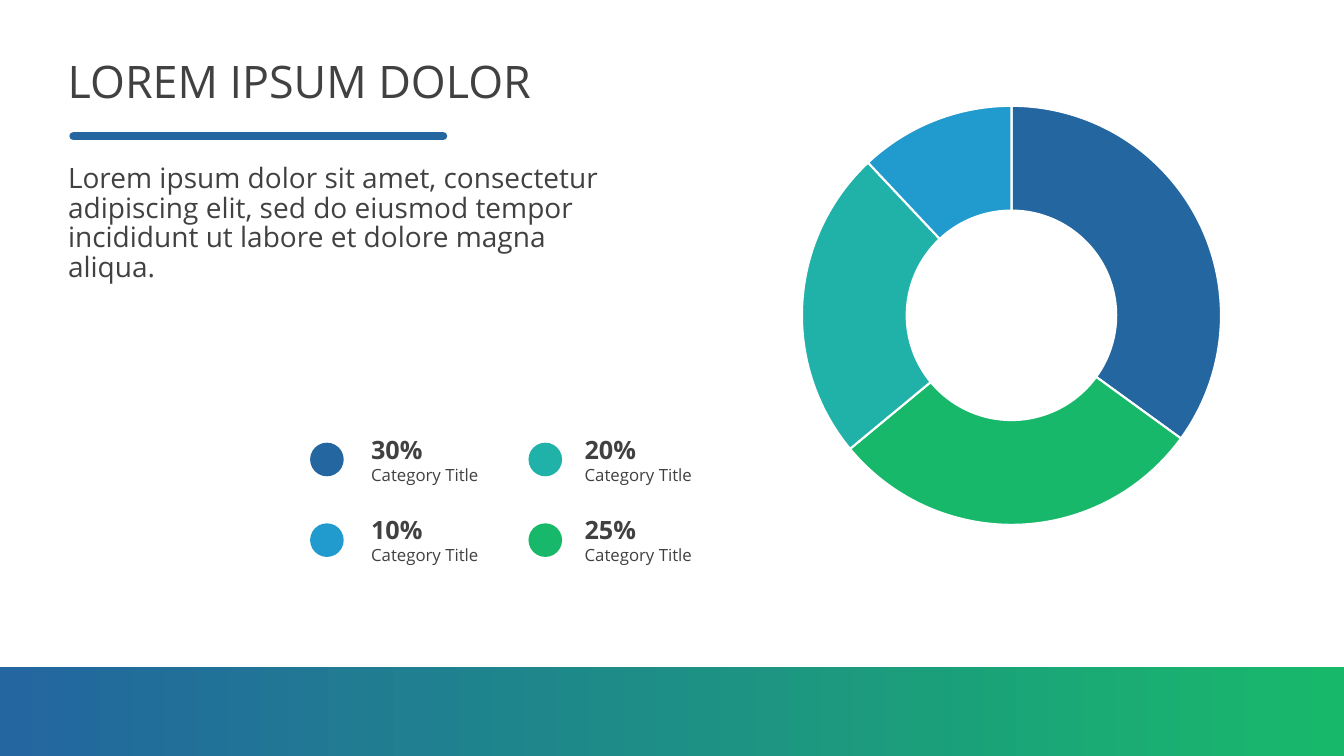
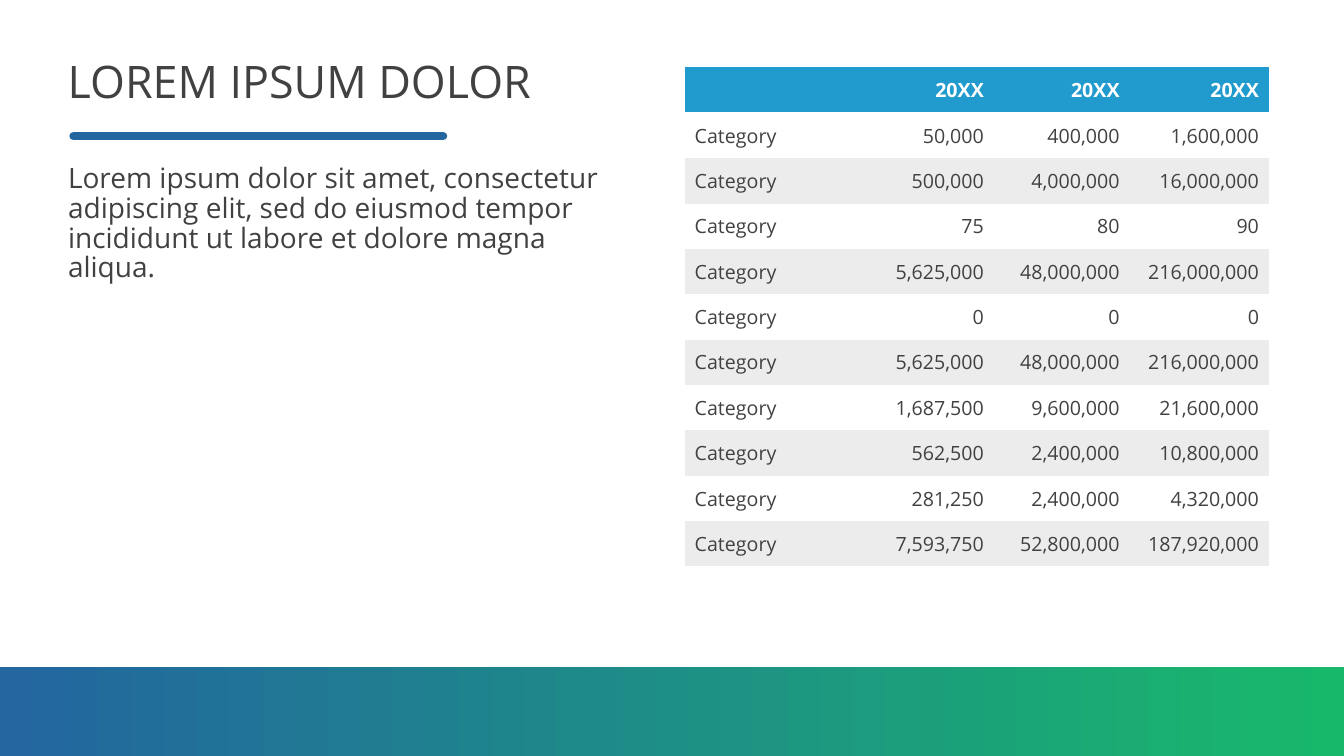
"""Build two slides: a doughnut chart with its legend, and a table of yearly figures."""
from dataclasses import dataclass

from lxml.etree import SubElement
from pptx import Presentation
from pptx.chart.data import CategoryChartData
from pptx.dml.color import RGBColor
from pptx.enum.chart import XL_CHART_TYPE as ChartType
from pptx.enum.shapes import MSO_CONNECTOR as Connector, MSO_SHAPE as Shape
from pptx.enum.text import MSO_ANCHOR as Anchor, MSO_AUTO_SIZE as AutoSize, PP_ALIGN as Align
from pptx.oxml import parse_xml
from pptx.oxml.ns import nsdecls, qn
from pptx.util import Pt

TITLE = "LOREM IPSUM DOLOR"
BODY = ("Lorem ipsum dolor sit amet, consectetur adipiscing elit, sed do eiusmod tempor "
        "incididunt ut labore et dolore magna aliqua.")
SHARES = [("1", 35, "blue"), ("2", 29, "green"), ("3", 24, "teal"), ("4", 12, "sky")]
LEGEND = [
    [("30%", "blue"), ("20%", "teal")],
    [("10%", "sky"), ("25%", "green")],
]
LEGEND_LABEL = "Category Title"
YEARS = ["", "20XX", "20XX", "20XX"]
FIGURES = [
    ("50,000", "400,000", "1,600,000"),
    ("500,000", "4,000,000", "16,000,000"),
    ("75", "80", "90"),
    ("5,625,000", "48,000,000", "216,000,000"),
    ("0", "0", "0"),
    ("5,625,000", "48,000,000", "216,000,000"),
    ("1,687,500", "9,600,000", "21,600,000"),
    ("562,500", "2,400,000", "10,800,000"),
    ("281,250", "2,400,000", "4,320,000"),
    ("7,593,750", "52,800,000", "187,920,000"),
]
ROW_LABEL = "Category"
PLAIN_TABLE_STYLE = "{2D5ABB26-0587-4C30-8999-92F81FD0307C}"


@dataclass(frozen=True)
class Theme:
    blue: RGBColor = RGBColor.from_string("2366A0")
    green: RGBColor = RGBColor.from_string("18B86B")
    teal: RGBColor = RGBColor.from_string("20B2A9")
    sky: RGBColor = RGBColor.from_string("219ACE")
    ink: RGBColor = RGBColor.from_string("414141")
    white: RGBColor = RGBColor.from_string("FFFFFF")
    stripe: RGBColor = RGBColor.from_string("ECECEC")
    font: str = "Open Sans"
    chart_font: str = "Calibri"
    title_size: int = 32
    body_size: int = 20
    share_size: int = 18
    cell_size: int = 14
    label_size: int = 12
    chart_size: int = 10


THEME = Theme()
WIDTH, HEIGHT = 960, 540


def points(*lengths):
    return [Pt(length) for length in lengths]


def style(paragraph, size, color=THEME.ink, bold=False, font=THEME.font):
    paragraph.font.name = font
    paragraph.font.size = Pt(size)
    paragraph.font.bold = bold
    paragraph.font.color.rgb = color


def add_text(slide, text, box, size, spacing, anchor=Anchor.TOP, after=0, bold=False):
    frame = slide.shapes.add_textbox(*points(*box)).text_frame
    frame.word_wrap = True
    frame.auto_size = AutoSize.NONE
    frame.vertical_anchor = anchor
    paragraph = frame.paragraphs[0]
    paragraph.text = text
    paragraph.line_spacing = spacing
    paragraph.space_after = Pt(after)
    style(paragraph, size, bold=bold)


def add_plain_shape(slide, preset, box):
    shape = slide.shapes.add_shape(preset, *points(*box))
    shape.shadow.inherit = False
    shape.line.fill.background()
    return shape


def add_base(deck, body_height):
    slide = deck.slides.add_slide(deck.slide_layouts[6])
    band = add_plain_shape(slide, Shape.RECTANGLE, (0, 476.5, WIDTH, 63.5))
    band.fill.gradient()
    band.fill.gradient_angle = 0
    for stop, color in zip(band.fill.gradient_stops, (THEME.blue, THEME.green)):
        stop.color.rgb = color

    rule = slide.shapes.add_connector(Connector.STRAIGHT, *points(52.5, 97.3, 316.5, 97.3))
    rule.line.color.rgb = THEME.blue
    rule.line.width = Pt(6)
    rule.line._get_or_add_ln().set("cap", "rnd")
    SubElement(rule._element.spPr, qn("a:effectLst"))

    add_text(slide, TITLE, (41.3, 36, 882.7, 49.7), THEME.title_size, 0.85, Anchor.MIDDLE)
    add_text(slide, BODY, (41.5, 114.5, 402.5, body_height), THEME.body_size, 0.88)
    return slide


def add_doughnut(slide):
    data = CategoryChartData()
    data.categories = [name for name, _, _ in SHARES]
    data.add_series("Series 1", [value for _, value, _ in SHARES])
    chart = slide.shapes.add_chart(
        ChartType.DOUGHNUT, *points(563, 62.6, 319, 325.4), data).chart
    chart.has_legend = False
    chart.has_title = False
    chart.font.name = THEME.chart_font
    chart.font.size = Pt(THEME.chart_size)
    chart.font.color.rgb = THEME.white

    plot = chart.plots[0]
    plot.vary_by_categories = True
    for index, (_, _, color) in enumerate(SHARES):
        slice_format = plot.series[0].points[index].format
        slice_format.fill.solid()
        slice_format.fill.fore_color.rgb = getattr(THEME, color)
        slice_format.line.color.rgb = THEME.white
        slice_format.line.width = Pt(1.5)

    plot_area = chart._chartSpace.find(".//" + qn("c:plotArea"))
    plot_area.find(".//" + qn("c:holeSize")).set("val", "52")
    for default_layout in plot_area.findall(qn("c:layout")):
        plot_area.remove(default_layout)
    plot_area.insert(0, parse_xml(
        f'<c:layout {nsdecls("c")}><c:manualLayout><c:layoutTarget val="inner"/>'
        '<c:xMode val="edge"/><c:yMode val="edge"/><c:x val="0.03"/><c:y val="0.04"/>'
        '<c:w val="0.94"/><c:h val="0.92"/></c:manualLayout></c:layout>'))


def add_legend(slide):
    top, row_pitch, dot_size = 309, 57.6, 24
    columns = [(221.5, 258), (377.5, 410.5)]
    for row, entries in enumerate(LEGEND):
        y = top + row * row_pitch
        for (dot_x, text_x), (share, color) in zip(columns, entries):
            dot = add_plain_shape(slide, Shape.OVAL, (dot_x, y + 7.2, dot_size, dot_size))
            dot.fill.solid()
            dot.fill.fore_color.rgb = getattr(THEME, color)
            add_text(slide, share, (text_x, y, 99.4, 23), THEME.share_size, 0.9,
                     after=2, bold=True)
            add_text(slide, LEGEND_LABEL, (text_x, y + 20.8, 99.4, 23), THEME.label_size,
                     0.9, after=2)


def add_header_border(cell):
    cell._tc.get_or_add_tcPr().insert(0, parse_xml(
        f'<a:lnB {nsdecls("a")} w="{Pt(2)}"><a:solidFill>'
        f'<a:srgbClr val="{THEME.white}"/></a:solidFill></a:lnB>'))


def add_figures(slide):
    rows = [YEARS] + [(ROW_LABEL, *figures) for figures in FIGURES]
    widths = [123, 98, 97, 99.5]
    row_height = 32.4
    table = slide.shapes.add_table(
        len(rows), len(widths),
        *points(489, 48.2, sum(widths), row_height * len(rows))).table
    table._tbl.tblPr.find(qn("a:tableStyleId")).text = PLAIN_TABLE_STYLE
    for column, width in zip(table.columns, widths):
        column.width = Pt(width)

    for r, texts in enumerate(rows):
        table.rows[r].height = Pt(row_height)
        header = r == 0
        fill = THEME.sky if header else THEME.white if r % 2 else THEME.stripe
        for c, text in enumerate(texts):
            cell = table.cell(r, c)
            cell.fill.solid()
            cell.fill.fore_color.rgb = fill
            cell.vertical_anchor = Anchor.MIDDLE
            paragraph = cell.text_frame.paragraphs[0]
            paragraph.text = text
            paragraph.alignment = Align.RIGHT if c else Align.LEFT
            style(paragraph, THEME.cell_size, THEME.white if header else THEME.ink, header)
            if header:
                add_header_border(cell)


def main():
    deck = Presentation()
    deck.slide_width, deck.slide_height = points(WIDTH, HEIGHT)

    chart_slide = add_base(deck, 160.5)
    add_doughnut(chart_slide)
    add_legend(chart_slide)

    table_slide = add_base(deck, 323.3)
    add_figures(table_slide)

    deck.save("out.pptx")


if __name__ == "__main__":
    main()
